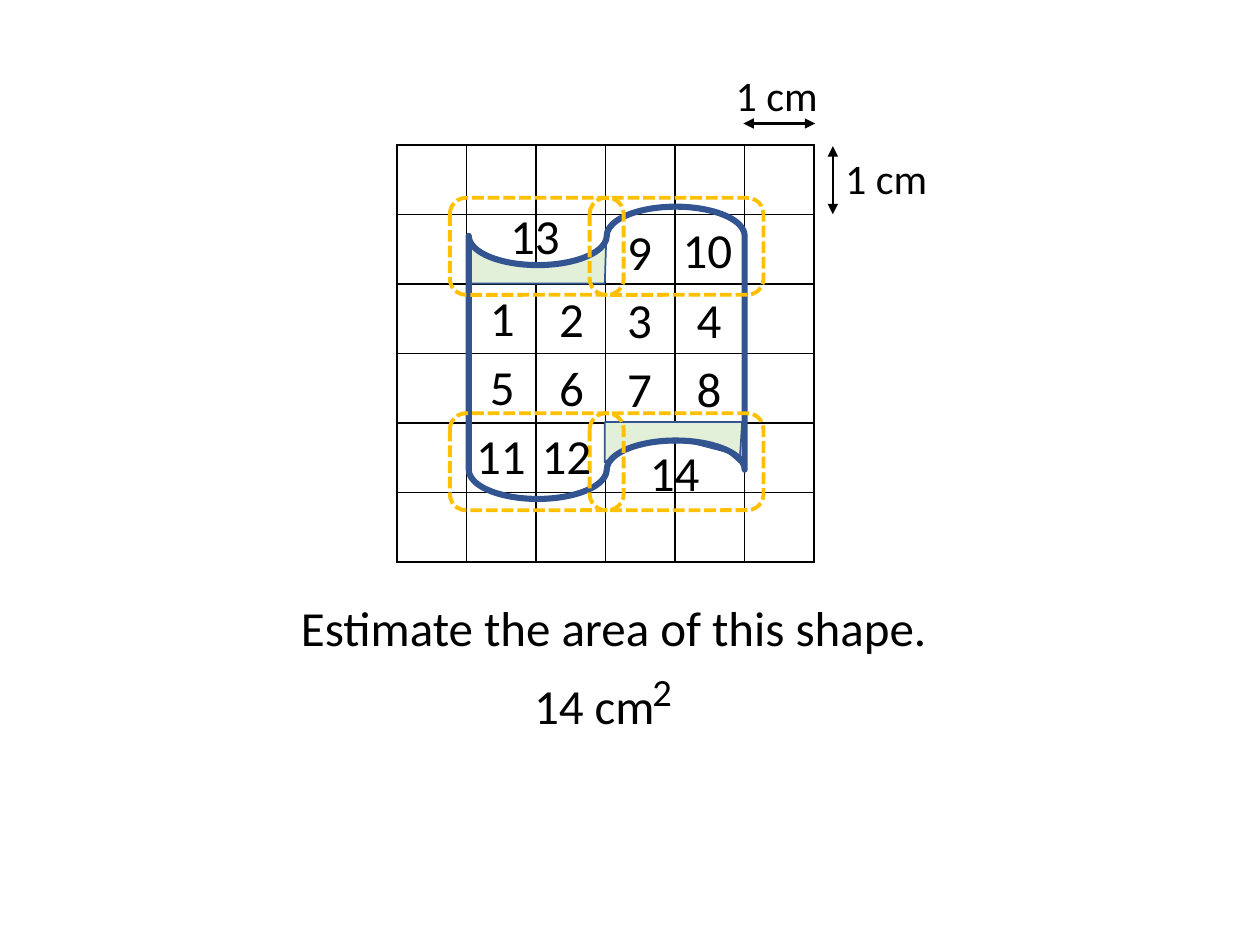
from lxml import etree
from pptx import Presentation
from pptx.dml.color import RGBColor
from pptx.enum.dml import MSO_LINE
from pptx.enum.shapes import MSO_CONNECTOR, MSO_SHAPE
from pptx.oxml.ns import qn
from pptx.util import Pt

PX = 9144
TAPE = MSO_SHAPE.FLOWCHART_PUNCHED_TAPE
ROUNDED = MSO_SHAPE.ROUNDED_RECTANGLE
STRAIGHT = MSO_CONNECTOR.STRAIGHT
DASH = MSO_LINE.SQUARE_DOT
FONT = "Calibri"
COLORS = {"ink": "000000", "outline": "325491", "part": "E2F0D9", "group": "FFC000"}

UPPER_PART = [(373, 193), (372, 225), (480, 225), (481, 193), (472, 201),
              (441, 210), (413, 210), (383, 201)]
LOWER_PART = [(587, 367), (589, 335), (480, 335), (480, 367), (489, 360),
              (519, 351), (547, 351), (578, 359)]
PART_SQUARES = [("9", 488, 171, 47), ("10", 532, 169, 67), ("11", 368, 333, 67),
                ("12", 420, 333, 67), ("13", 395, 158, 67), ("14", 506, 346, 67)]


def emu(*lengths):
    """Turn px lengths into EMU."""
    return [n * PX for n in lengths]


def rgb(name):
    """Look up a named colour."""
    return RGBColor.from_string(COLORS[name])


def set_line(line, color, width):
    """Set the colour and width of a line."""
    line.color.rgb = rgb(color)
    line.width = Pt(width)


def add_grid(s, x, y, size, count):
    """Add a square grid of empty cells with thin borders."""
    table = s.shapes.add_table(count, count, *emu(x, y, size, size)).table
    table.first_row = table.horz_banding = False
    for cell in table.iter_cells():
        tcPr = cell._tc.get_or_add_tcPr()
        for side in ("a:lnL", "a:lnR", "a:lnT", "a:lnB"):
            ln = etree.SubElement(tcPr, qn(side), w=str(Pt(1)))
            fill = etree.SubElement(ln, qn("a:solidFill"))
            etree.SubElement(fill, qn("a:srgbClr"), val=COLORS["ink"])
        cell.fill.background()


def add_part(s, points):
    """Add a shaded part of the shape."""
    builder = s.shapes.build_freeform(*points[0], scale=PX)
    builder.add_line_segments(points[1:], close=True)
    sp = builder.convert_to_shape()
    sp.shadow.inherit = False
    sp.fill.solid()
    sp.fill.fore_color.rgb = rgb("part")
    set_line(sp.line, "outline", 1)


def add_outline(s, kind, x, y, w, h, color, width):
    """Add an unfilled preset shape."""
    sp = s.shapes.add_shape(kind, *emu(x, y, w, h))
    sp.shadow.inherit = False
    sp.fill.background()
    set_line(sp.line, color, width)
    return sp


def add_text(s, text, x, y, w, h=57, size=28):
    """Add a one-line text box."""
    tf = s.shapes.add_textbox(*emu(x, y, w, h)).text_frame
    tf.word_wrap = True
    p = tf.paragraphs[0]
    p.text = text
    p.font.name = FONT
    p.font.size = Pt(size)
    p.font.color.rgb = rgb("ink")


def add_arrow(s, x1, y1, x2, y2):
    """Add a line with an arrowhead at each end."""
    c = s.shapes.add_connector(STRAIGHT, *emu(x1, y1, x2, y2))
    set_line(c.line, "ink", 1.5)
    ln = c.line._get_or_add_ln()
    for end in ("a:headEnd", "a:tailEnd"):
        etree.SubElement(ln, qn(end), type="triangle")
    etree.SubElement(c._element.spPr, qn("a:effectLst"))


def main():
    """Build the slide and save it."""
    prs = Presentation()
    prs.slide_width, prs.slide_height = emu(1000, 750)
    s = prs.slides.add_slide(prs.slide_layouts[6])

    add_grid(s, 315, 115, 331, 6)
    for points in (UPPER_PART, LOWER_PART):
        add_part(s, points)
    add_outline(s, TAPE, 372, 164, 219, 232, "outline", 3.5)

    for i in range(8):
        row, col = divmod(i, 4)
        add_text(s, str(i + 1), round(379 + 54.7 * col), 223 + 55 * row + min(col, 2), 47)
    for y in (157, 328):
        for x in (357, 468):
            box = add_outline(s, ROUNDED, x, y, 138, 77, "group", 2.25)
            box.line.dash_style = DASH
    for text, x, y, w in PART_SQUARES:
        add_text(s, text, x, y, w)

    add_arrow(s, 590, 98, 647, 98)
    add_text(s, "1 cm", 574, 50, 174, 50, 24)
    add_arrow(s, 661, 116, 661, 170)
    add_text(s, "1 cm", 661, 116, 174, 50, 24)

    add_text(s, "Estimate the area of this shape.", 229, 469, 556)
    add_text(s, "14 cm", 414, 531, 176)
    add_text(s, "2", 508, 525, 176, 47, 22)
    prs.save("out.pptx")


if __name__ == "__main__":
    main()
